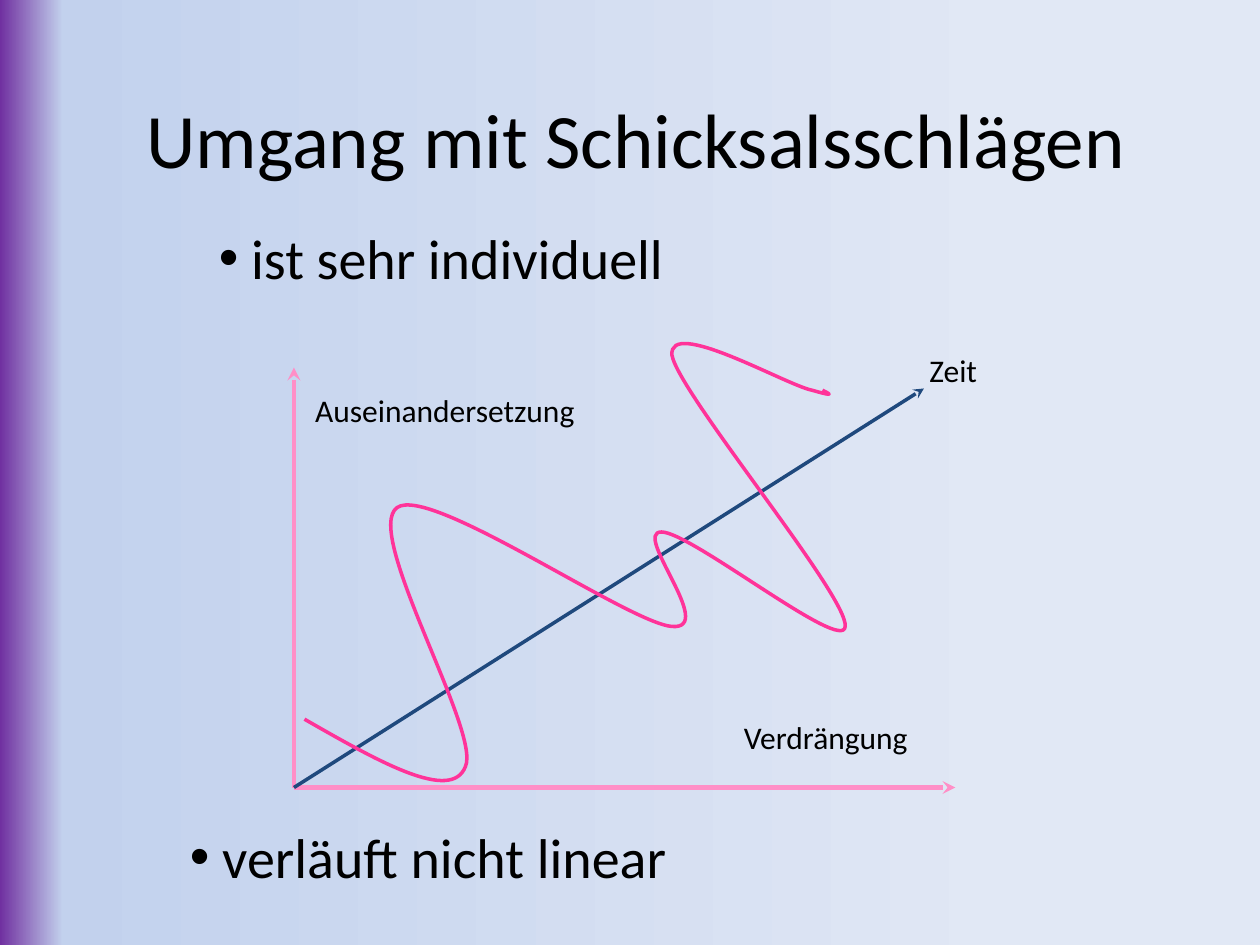
from copy import deepcopy

from lxml import etree
from pptx import Presentation
from pptx.dml.color import RGBColor
from pptx.enum.shapes import MSO_CONNECTOR
from pptx.enum.text import MSO_ANCHOR, MSO_AUTO_SIZE, PP_ALIGN
from pptx.oxml.ns import qn
from pptx.util import Pt

STRAIGHT = MSO_CONNECTOR.STRAIGHT
MIDDLE, TOP = MSO_ANCHOR.MIDDLE, MSO_ANCHOR.TOP
CENTER, LEFT = PP_ALIGN.CENTER, PP_ALIGN.LEFT
GROW = MSO_AUTO_SIZE.SHAPE_TO_FIT_TEXT

BLACK = RGBColor(0x00, 0x00, 0x00)
PINK = RGBColor(0xFF, 0x8F, 0xC7)
MAGENTA = RGBColor(0xFF, 0x33, 0x99)
NAVY = RGBColor(0x1F, 0x49, 0x7D)
PURPLE = RGBColor(0x70, 0x30, 0xA0)
LIGHT_BLUE = RGBColor(0xC2, 0xD1, 0xED)
PALE_BLUE = RGBColor(0xE1, 0xE8, 0xF5)

# Coping curve relative to its diagram: start, then (control, control, end)
CURVE_START = (6, 230)
CURVE_SEGMENTS = [
    ((48, 254), (90, 278), (98, 257)),
    ((107, 237), (39, 123), (59, 109)),
    ((78, 96), (191, 175), (216, 177)),
    ((242, 179), (193, 123), (210, 123)),
    ((227, 123), (314, 193), (315, 177)),
    ((317, 160), (220, 44), (216, 22)),
    ((214, 0), (281, 39), (296, 42)),
    ((310, 46), (306, 44), (302, 42)),
]


def add_text(slide, text, left, top, width, height, size=18, align=LEFT,
             anchor=TOP, wrap=True, grow=True, bullet=None):
    box = slide.shapes.add_textbox(Pt(left), Pt(top), Pt(width), Pt(height))
    frame = box.text_frame
    frame.word_wrap = wrap
    frame.vertical_anchor = anchor
    if grow:
        frame.auto_size = GROW
    paragraph = frame.paragraphs[0]
    paragraph.alignment = align
    run = paragraph.add_run()
    run.text = text
    run.font.name = "Calibri"
    run.font.size = Pt(size)
    run.font.color.rgb = BLACK
    if bullet:
        properties = paragraph._p.get_or_add_pPr()
        etree.SubElement(properties, qn("a:buFont"), typeface="Arial")
        etree.SubElement(properties, qn("a:buChar"), char=bullet)


def add_arrow(slide, start, end, color, weight):
    arrow = slide.shapes.add_connector(STRAIGHT, *map(Pt, start + end))
    arrow.line.color.rgb = color
    arrow.line.width = Pt(weight)
    etree.SubElement(arrow.line._get_or_add_ln(), qn("a:tailEnd"), type="stealth")
    etree.SubElement(arrow._element.spPr, qn("a:effectLst"))


def add_curve(slide, left, top, start, segments, color, weight):
    """Draw the control polygon, then join each three points into a Bézier."""
    builder = slide.shapes.build_freeform(*start, scale=Pt(1))
    builder.add_line_segments([point for segment in segments for point in segment],
                              close=False)
    curve = builder.convert_to_shape(Pt(left), Pt(top))
    for outline in curve._element.iter(qn("a:path")):
        lines = outline.findall(qn("a:lnTo"))
        for first in range(0, len(lines), 3):
            bezier = etree.SubElement(outline, qn("a:cubicBezTo"))
            for line in lines[first:first + 3]:
                bezier.append(line[0])
                outline.remove(line)
    curve.shadow.inherit = False
    curve.fill.background()
    curve.line.color.rgb = color
    curve.line.width = Pt(weight)


def paint_background(slide):
    fill = slide.background.fill
    fill.gradient()
    fill.gradient_angle = 0
    first = fill.gradient_stops[0]._gs
    first.addnext(deepcopy(first))
    colors = (PURPLE, LIGHT_BLUE, PALE_BLUE)
    stops = list(first.getparent())
    for stop, color, position in zip(stops, colors, (0, 5, 80)):
        stop.set("pos", str(position * 1000))
        for old_color in list(stop):
            stop.remove(old_color)
        etree.SubElement(stop, qn("a:srgbClr"), val=str(color))


def add_diagram(slide, left, top):
    # Axes and time line from a shared origin
    origin = (left, top + 269)
    add_arrow(slide, origin, (left, top + 29), PINK, 2.5)
    add_arrow(slide, origin, (left + 378, top + 269), PINK, 2.5)
    add_arrow(slide, origin, (left + 360, top + 41), NAVY, 2)

    # Winding course of coping
    add_curve(slide, left, top, CURVE_START, CURVE_SEGMENTS, MAGENTA, 2)

    # Labels
    for label, x, y, width in (("Auseinandersetzung", 5, 39, 192),
                               ("Verdrängung", 250, 226, 132),
                               ("Zeit", 356, 16, 45)):
        add_text(slide, label, left + x, top + y, width, 29)


def main():
    presentation = Presentation()
    presentation.slide_width, presentation.slide_height = Pt(720), Pt(540)
    slide = presentation.slides.add_slide(presentation.slide_layouts[6])

    paint_background(slide)
    add_text(slide, "Umgang mit Schicksalsschlägen", 39.6, 33.8, 648, 90,
             size=44, align=CENTER, anchor=MIDDLE, grow=False)
    add_diagram(slide, 168, 181)

    # Statements above and below the diagram
    for statement, left, top, width in ((" ist sehr individuell", 118, 124, 271),
                                        (" verläuft nicht linear", 101.5, 466.6, 291)):
        add_text(slide, statement, left, top, width, 46, size=32,
                 wrap=False, bullet="•")

    presentation.save("out.pptx")


if __name__ == "__main__":
    main()
